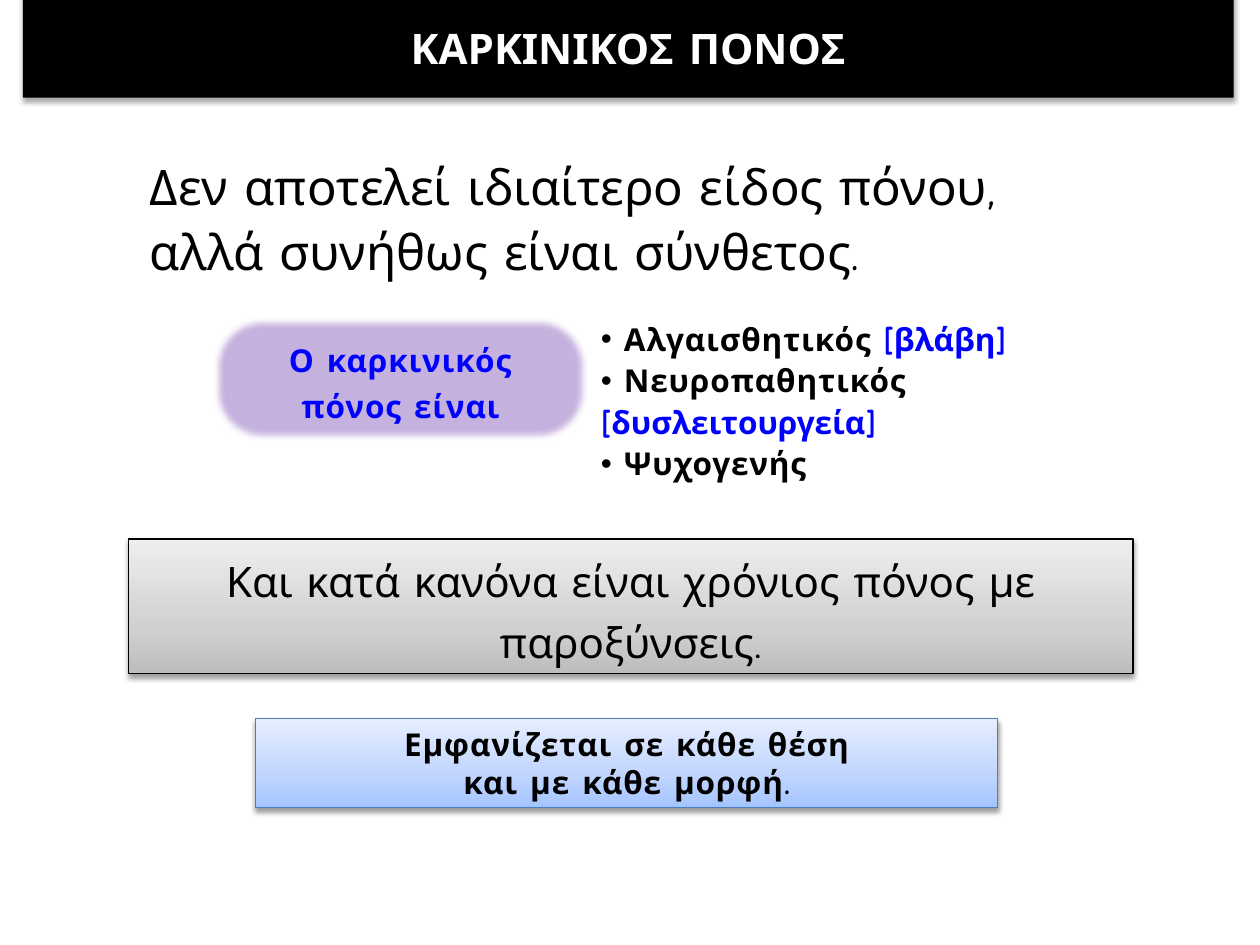
from lxml import etree
from pptx import Presentation
from pptx.dml.color import RGBColor
from pptx.enum.shapes import MSO_SHAPE
from pptx.enum.text import MSO_ANCHOR, MSO_AUTO_SIZE, PP_ALIGN
from pptx.oxml.ns import qn
from pptx.util import Pt

RECTANGLE = MSO_SHAPE.RECTANGLE
ROUNDED = MSO_SHAPE.ROUNDED_RECTANGLE
CENTER, LEFT = PP_ALIGN.CENTER, PP_ALIGN.LEFT
MIDDLE, TOP = MSO_ANCHOR.MIDDLE, MSO_ANCHOR.TOP
FIT_SHAPE = MSO_AUTO_SIZE.SHAPE_TO_FIT_TEXT

FONT = "Comic Neue"
COLORS = {
    "black": "000000", "white": "FFFFFF", "blue": "0000FF",
    "purple": "C6B2DF", "steel": "4B7EBC",
}
# Gradient stops run from the bottom edge to the top edge
GRAY_STOPS = ((0, "BDBDBD"), (35, "D1D1D1"), (100, "EEEEEE"))
BLUE_STOPS = ((0, "A4C4FF"), (35, "BFD4FF"), (100, "E6EEFF"))


def color(name):
    return RGBColor.from_string(COLORS[name])


def add_node(parent, tag, **attributes):
    node = etree.SubElement(parent, qn(tag))
    for key, value in attributes.items():
        node.set(key, str(value))
    return node


def place(shape, box):
    shape.left, shape.top, shape.width, shape.height = (Pt(n) for n in box)


def add_effect(shape, tag, **attributes):
    shape.shadow.inherit = False
    effects = shape._element.spPr.find(qn("a:effectLst"))
    return add_node(effects, tag, **attributes)


def add_shadow(shape, opacity, distance):
    shadow = add_effect(shape, "a:outerShdw", blurRad=Pt(3.1), dist=Pt(distance),
                        dir=90 * 60000, rotWithShape=0)
    shade = add_node(shadow, "a:srgbClr", val=COLORS["black"])
    add_node(shade, "a:alpha", val=opacity * 1000)


def fill_gradient(shape, stops):
    shape.fill.gradient()
    shape.fill.gradient_angle = 90
    stop_list = shape._element.spPr.find(qn("a:gradFill")).find(qn("a:gsLst"))
    for old_stop in list(stop_list):
        stop_list.remove(old_stop)
    for position, value in stops:
        stop = add_node(stop_list, "a:gs", pos=position * 1000)
        add_node(stop, "a:srgbClr", val=value)


def write(shape, paragraphs, size, bold=False, name="black", align=CENTER,
          line_spacing=1.0, tracking=0, anchor=MIDDLE):
    """Write paragraphs, each a list of (text, colour name, tracking) or a string."""
    frame = shape.text_frame
    frame.word_wrap = True
    frame.auto_size = FIT_SHAPE
    frame.vertical_anchor = anchor
    for index, content in enumerate(paragraphs):
        para = frame.add_paragraph() if index else frame.paragraphs[0]
        para.alignment = align
        para.line_spacing = line_spacing
        para.space_before = Pt(0)
        para.font.name, para.font.size, para.font.bold = FONT, Pt(size), bold
        para.font.color.rgb = color(name)
        spans = [(content, name, tracking)] if isinstance(content, str) else content
        for text, span_name, span_tracking in spans:
            span = para.add_run()
            span.text = text
            if span_name != name:
                span.font.color.rgb = color(span_name)
            if span_tracking:
                span._r.get_or_add_rPr().set("spc", str(int(span_tracking * 100)))
    return frame


def add_title(page, box):
    title = page.shapes.title
    place(title, box)
    title.fill.solid()
    title.fill.fore_color.rgb = color("black")
    title.line.fill.background()
    add_shadow(title, 35, 1.8)
    write(title, ["ΚΑΡΚΙΝΙΚΟΣ ΠΟΝΟΣ"], 24, bold=True, name="white", line_spacing=1.1)


def add_statement(page, box):
    statement = page.shapes.add_textbox(*(Pt(n) for n in box))
    write(statement, ["Δεν αποτελεί ιδιαίτερο είδος πόνου, αλλά συνήθως είναι σύνθετος."],
          28, align=LEFT, line_spacing=1.1, anchor=TOP)


def add_soft_label(page, box):
    label = page.shapes.add_shape(ROUNDED, *(Pt(n) for n in box))
    label.adjustments[0] = 0.35
    label.fill.solid()
    label.fill.fore_color.rgb = color("purple")
    label.line.fill.background()
    add_effect(label, "a:softEdge", rad=Pt(4))
    frame = write(label, ["Ο καρκινικός πόνος είναι"], 18, bold=True, name="blue",
                  line_spacing=1.2, tracking=0.5)
    frame.auto_size = MSO_AUTO_SIZE.NONE
    frame.margin_left = frame.margin_right = Pt(7.2)


def add_pain_types(page, box):
    types = page.shapes.add_textbox(*(Pt(n) for n in box))
    items = (("Αλγαισθητικός", "βλάβη"), ("Νευροπαθητικός", "δυσλειτουργεία"),
             ("Ψυχογενής", None))
    paragraphs = []
    for kind, cause in items:
        spans = [(f" {kind}", "black", 0.5)]
        if cause:
            spans.append((f" [{cause}]", "blue", 0))
        paragraphs.append(spans)
    frame = write(types, paragraphs, 18, bold=True, align=LEFT, line_spacing=1.1,
                  anchor=TOP)
    for para in frame.paragraphs:
        properties = para._p.get_or_add_pPr()
        bullet_font = etree.Element(qn("a:buFont"), typeface="Arial")
        bullet = etree.Element(qn("a:buChar"), char="•")
        defaults = properties.find(qn("a:defRPr"))
        defaults.addprevious(bullet_font)
        defaults.addprevious(bullet)


def add_panel(page, box, stops, line_name, paragraphs, size, **text_format):
    panel = page.shapes.add_shape(RECTANGLE, *(Pt(n) for n in box))
    fill_gradient(panel, stops)
    panel.line.color.rgb = color(line_name)
    panel.line.width = Pt(0.75)
    add_shadow(panel, 38, 1.6)
    return write(panel, paragraphs, size, **text_format)


def main():
    deck = Presentation()
    deck.slide_width, deck.slide_height = Pt(720), Pt(540)
    page = deck.slides.add_slide(deck.slide_layouts[5])

    # Heading and opening statement
    add_title(page, (13, 6, 692, 39.5))
    add_statement(page, (78.5, 82.8, 568, 82))

    # Label and the kinds of pain beside it
    add_soft_label(page, (121.7, 181, 214.6, 71.5))
    add_pain_types(page, (336.3, 177, 339, 79))

    # Concluding panels
    chronic = add_panel(page, (73.4, 308, 574, 77), GRAY_STOPS, "black",
                        [[("Και κατά κανόνα είναι χρόνιος πόνος με παροξύνσεις", "black", 0),
                          (".", "black", 0)]], 24, line_spacing=1.2)
    full_stop = chronic.paragraphs[0].runs[-1]
    full_stop.font.name, full_stop.font.size = "Calibri", Pt(18)
    add_panel(page, (146.2, 410.5, 424, 51), BLUE_STOPS, "steel",
              ["Εμφανίζεται σε κάθε θέση", "και με κάθε μορφή."], 18,
              bold=True, tracking=0.5)

    deck.save("out.pptx")


if __name__ == "__main__":
    main()
